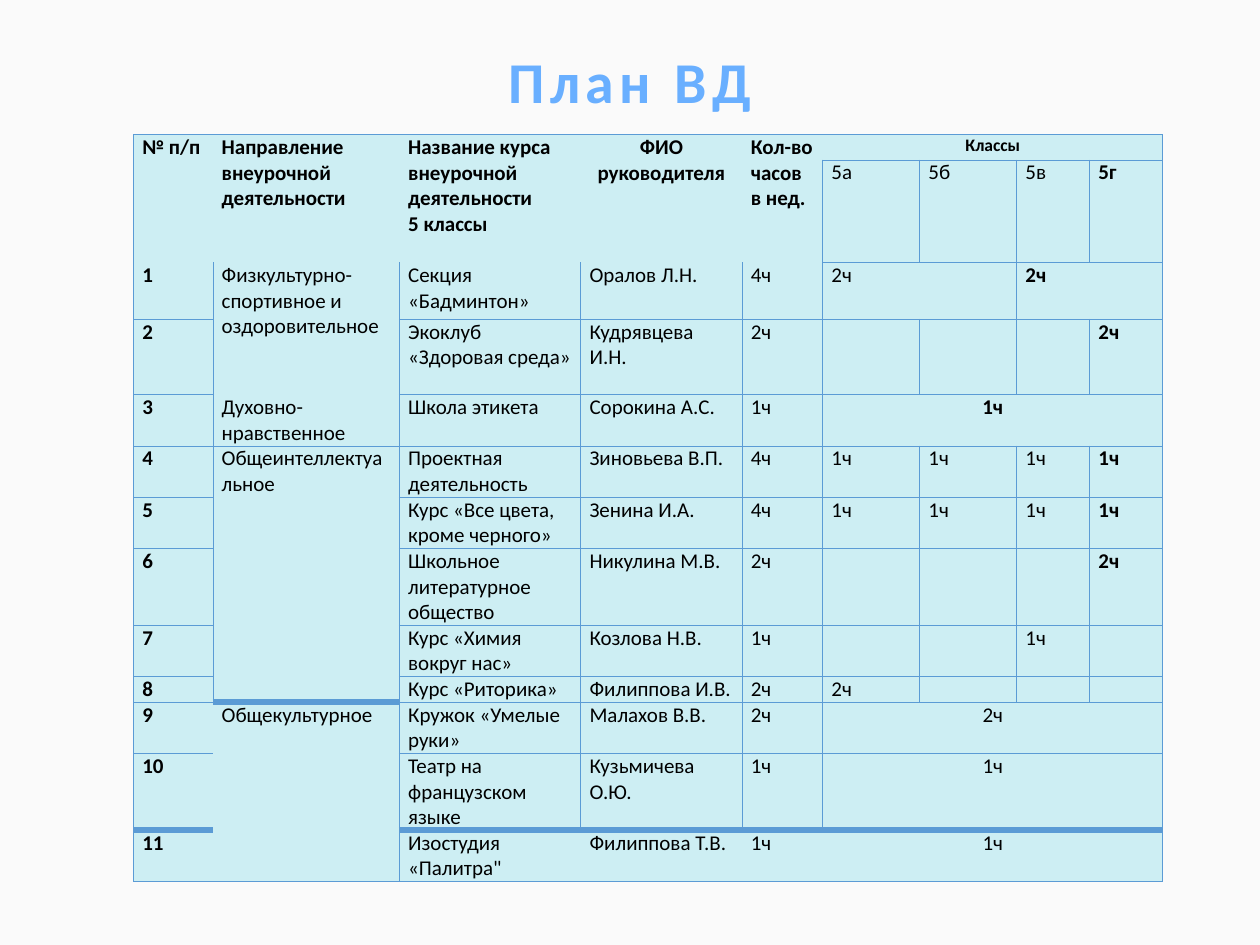
import pptx
import pptx.dml.color
import pptx.enum.text
import pptx.oxml
import pptx.oxml.ns
import pptx.util
from lxml import etree
from pptx.util import Inches

COLORS = {"page": "FAFAFA", "cell": "CDEEF3", "grid": "5B9BD5", "text": "000000",
          "title_top": "69AFFF", "title_bottom": "2D74B4", "title_outline": "F5F7FB"}
LEFT, CENTER = pptx.enum.text.PP_ALIGN.LEFT, pptx.enum.text.PP_ALIGN.CENTER
THIN, THICK = 0.5, 4

COLUMN_WIDTHS = [0.63, 1.48, 1.44, 1.28, 0.64, 0.77, 0.77, 0.58, 0.58]
ROW_HEIGHTS = [0.2, 0.79, 0.45, 0.6, 0.4, 0.4, 0.4, 0.6, 0.4, 0.2, 0.4, 0.6, 0.4]
PLAN = [
    ["№ п/п", "Направление внеурочной деятельности",
     "Название курса внеурочной деятельности\n5 классы", "ФИО руководителя",
     "Кол-во часов в нед.", "Классы", "", "", ""],
    ["", "", "", "", "", "5а", "5б", "5в", "5г"],
    ["1", "Физкультурно-спортивное и оздоровительное", "Секция «Бадминтон»",
     "Оралов Л.Н.", "4ч", "2ч", "", "2ч", ""],
    ["2", "", "Экоклуб «Здоровая среда»", "Кудрявцева И.Н.", "2ч", "", "", "", "2ч"],
    ["3", "Духовно-нравственное", "Школа этикета", "Сорокина А.С.", "1ч", "1ч", "", "", ""],
    ["4", "Общеинтеллектуальное", "Проектная деятельность", "Зиновьева В.П.",
     "4ч", "1ч", "1ч", "1ч", "1ч"],
    ["5", "", "Курс «Все цвета, кроме черного»", "Зенина И.А.", "4ч", "1ч", "1ч", "1ч", "1ч"],
    ["6", "", "Школьное литературное общество", "Никулина М.В.", "2ч", "", "", "", "2ч"],
    ["7", "", "Курс «Химия вокруг нас»", "Козлова Н.В.", "1ч", "", "", "1ч", ""],
    ["8", "", "Курс «Риторика»", "Филиппова И.В.", "2ч", "2ч", "", "", ""],
    ["9", "Общекультурное", "Кружок «Умелые руки»", "Малахов В.В.", "2ч", "2ч", "", "", ""],
    ["10", "", "Театр на французском языке", "Кузьмичева О.Ю.", "1ч", "1ч", "", "", ""],
    ["11", "", "Изостудия «Палитра\"", "Филиппова Т.В.", "1ч", "1ч", "", "", ""],
]
# (row, column): (rows, columns)
SPANS = {(0, column): (2, 1) for column in range(5)}
SPANS |= {(row, 5): (1, 4) for row in (0, 4, 10, 11, 12)}
SPANS |= {(2, 1): (2, 1), (5, 1): (5, 1), (10, 1): (3, 1), (2, 5): (1, 2), (2, 7): (1, 2)}
CENTERED = {(0, 3)} | {start for start, size in SPANS.items() if size == (1, 4)}
BOLD_HOURS = {(2, 7), (4, 5)}


def rgb(name):
    return pptx.dml.color.RGBColor.from_string(COLORS[name])


def write(paragraph, text, size=12, bold=False, color="text", align=LEFT):
    paragraph.alignment = align
    if not text:
        etree.SubElement(paragraph._p, pptx.oxml.ns.qn("a:endParaRPr"), sz=str(size * 100))
        return None
    run = paragraph.add_run()
    run.text = text
    run.font.name = "Calibri"
    run.font.size = pptx.util.Pt(size)
    run.font.bold = bold
    run.font.color.rgb = rgb(color)
    return run


def line_xml(tag, color, width):
    fill = f'<a:solidFill><a:srgbClr val="{COLORS[color]}"/></a:solidFill>' if width else "<a:noFill/>"
    return pptx.oxml.parse_xml(
        f'<a:{tag} {pptx.oxml.ns.nsdecls("a")} w="{int(width * 12700)}">{fill}</a:{tag}>')


def left_border(row, column):
    if column == 0:
        return THIN
    if row < 2:
        return THIN if row == 1 and column >= 5 else 0
    if row == len(PLAN) - 1:
        return THIN if column == 2 else 0
    return 0 if column == 1 and row >= 10 else THIN


def top_border(row, column):
    if row in (1, 2):
        return THIN if column >= 5 else 0
    if column == 1:
        return {0: THIN, 5: THIN, 10: THICK}.get(row, 0)
    return THICK if row == len(PLAN) - 1 else THIN


class PlanSlide:
    def __init__(self, presentation):
        self.slide = presentation.slides.add_slide(presentation.slide_layouts[5])
        self.slide.background.fill.solid()
        self.slide.background.fill.fore_color.rgb = rgb("page")

    def title(self, text, left, top, width, height):
        heading = self.slide.shapes.title
        heading.left, heading.top = Inches(left), Inches(top)
        heading.width, heading.height = Inches(width), Inches(height)
        heading.text_frame.vertical_anchor = pptx.enum.text.MSO_ANCHOR.MIDDLE
        paragraph = heading.text_frame.paragraphs[0]
        paragraph.line_spacing = 0.9
        run = write(paragraph, text, size=33, bold=True, color="title_top", align=CENTER)
        # Gradient letters with a pale outline and wide spacing
        run.font.fill.gradient()
        run.font.fill.gradient_angle = 270
        stops = zip(run.font.fill.gradient_stops, (0.1, 0.75), ("title_top", "title_bottom"))
        for stop, position, color in stops:
            stop.position = position
            stop.color.rgb = rgb(color)
        properties = run.font._element
        properties.set("spc", "300")
        properties.insert(0, line_xml("ln", "title_outline", 0.9))

    def table(self, left, top):
        frame = self.slide.shapes.add_table(
            len(PLAN), len(COLUMN_WIDTHS), Inches(left), Inches(top),
            Inches(sum(COLUMN_WIDTHS)), Inches(sum(ROW_HEIGHTS)))
        plan = frame.table
        plan.first_row = plan.horz_banding = False
        for column, width in zip(plan.columns, COLUMN_WIDTHS):
            column.width = Inches(width)
        for row, height in zip(plan.rows, ROW_HEIGHTS):
            row.height = Inches(height)
        for (row, column), (rows, columns) in SPANS.items():
            plan.cell(row, column).merge(plan.cell(row + rows - 1, column + columns - 1))
        for row, texts in enumerate(PLAN):
            for column, text in enumerate(texts):
                self.cell(plan.cell(row, column), text, row, column)

    def cell(self, cell, text, row, column):
        cell.margin_left = cell.margin_right = Inches(0.07)
        cell.margin_top = cell.margin_bottom = 0
        cell.fill.solid()
        cell.fill.fore_color.rgb = rgb("cell")
        bold = row == 0 or column in (0, 8) or (row, column) in BOLD_HOURS
        align = CENTER if (row, column) in CENTERED else LEFT
        for number, part in enumerate(text.split("\n")):
            frame = cell.text_frame
            paragraph = frame.add_paragraph() if number else frame.paragraphs[0]
            write(paragraph, part, size=10 if (row, column) == (0, 5) else 12,
                  bold=bold, align=align)
        # Each inner line belongs to the cell on its right or below it
        last_row, last_column = len(PLAN) - 1, len(COLUMN_WIDTHS) - 1
        span_rows, span_columns = SPANS.get((row, column), (1, 1))
        end_row, end_column = row + span_rows, column + span_columns
        borders = {
            "lnL": left_border(row, column),
            "lnR": THIN if end_column > last_column else left_border(row, end_column),
            "lnT": top_border(row, column),
            "lnB": THIN if end_row > last_row else top_border(end_row, column),
        }
        properties = cell._tc.get_or_add_tcPr()
        for position, (tag, width) in enumerate(borders.items()):
            properties.insert(position, line_xml(tag, "grid", width))


def main():
    presentation = pptx.Presentation()
    presentation.slide_width, presentation.slide_height = Inches(10), Inches(7.5)
    page = PlanSlide(presentation)
    page.title("План ВД", 0.69, 0.21, 8.62, 0.93)
    page.table(1.06, 1.07)
    presentation.save("out.pptx")


if __name__ == "__main__":
    main()
